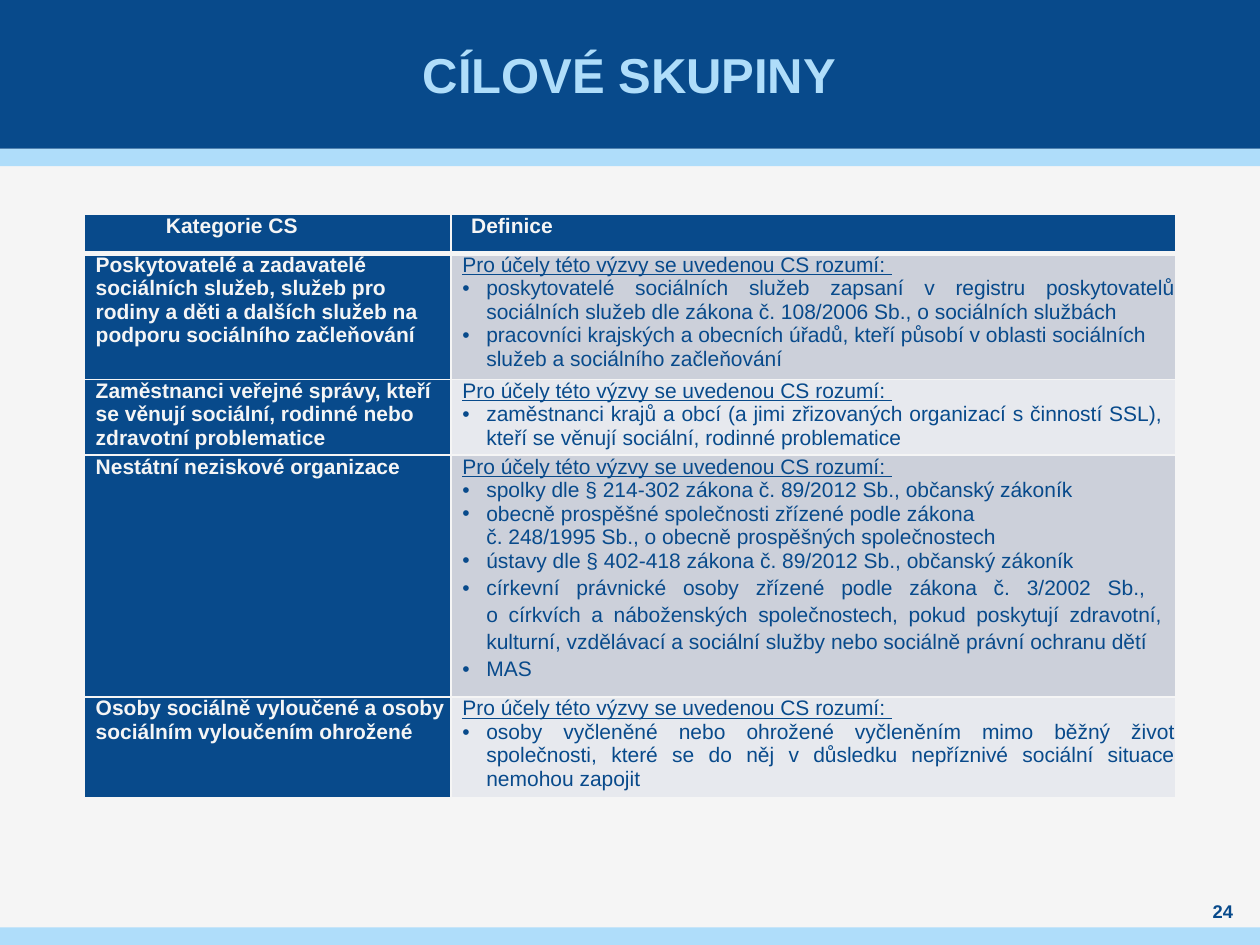
from copy import deepcopy

from lxml.etree import SubElement
from pptx import Presentation
from pptx.dml.color import RGBColor
from pptx.enum.shapes import MSO_SHAPE
from pptx.enum.text import MSO_ANCHOR, PP_ALIGN
from pptx.oxml.ns import qn
from pptx.util import Inches, Pt

WIDTH, HEIGHT = 10, 7.5
NAVY, SKY, PAPER = "084A8B", "AFDDFA", "F5F5F5"
BANDS = ("CCD0DA", "E7E9EE")
COLS = (2.91, 5.75)
ROWS = (0.31, 0.93, 0.57, 1.81, 0.74)
INDENT, HANG = 0.09, 0.19
LEAD = "Pro účely této výzvy se uvedenou CS rozumí: "
HEAD = {"size": Pt(12), "bold": True}
BODY = {"size": Pt(12), "bold": False}
LEFT, CENTER, JUSTIFY = PP_ALIGN.LEFT, PP_ALIGN.CENTER, PP_ALIGN.JUSTIFY

# category, right inset, bullets as (text, alignment, line spacing)
GROUPS = [
    ("Poskytovatelé a zadavatelé sociálních služeb, služeb pro rodiny a děti "
     "a dalších služeb na podporu sociálního začleňování", 0, [
         ("poskytovatelé sociálních služeb zapsaní v registru poskytovatelů\v"
          "sociálních služeb dle zákona č. 108/2006 Sb., o sociálních službách",
          JUSTIFY, 1),
         ("pracovníci krajských a obecních úřadů, kteří působí v oblasti sociálních "
          "služeb a sociálního začleňování", LEFT, 1)]),
    ("Zaměstnanci veřejné správy, kteří se věnují sociální, rodinné nebo "
     "zdravotní problematice", 0.1, [
         ("zaměstnanci krajů a obcí (a jimi zřizovaných organizací s činností SSL), "
          "kteří se věnují sociální, rodinné problematice", JUSTIFY, 1)]),
    ("Nestátní neziskové organizace", 0.1, [
        ("spolky dle § 214-302 zákona č. 89/2012 Sb., občanský zákoník", LEFT, 1),
        ("obecně prospěšné společnosti zřízené podle zákona \v"
         "č. 248/1995 Sb., o obecně prospěšných společnostech", LEFT, 1),
        ("ústavy dle § 402-418 zákona č. 89/2012 Sb., občanský zákoník", LEFT, 1),
        ("církevní právnické osoby zřízené podle zákona č. 3/2002 Sb., \v"
         "o církvích a náboženských společnostech, pokud poskytují zdravotní, "
         "kulturní, vzdělávací a sociální služby nebo sociálně právní ochranu dětí",
         JUSTIFY, 1.15),
        ("MAS", LEFT, 1.15)]),
    ("Osoby sociálně vyloučené a osoby sociálním vyloučením ohrožené", 0, [
        ("osoby vyčleněné nebo ohrožené vyčleněním mimo běžný život společnosti, "
         "které se do něj v důsledku nepříznivé sociální situace nemohou zapojit",
         JUSTIFY, 1)]),
]


def rgb(value):
    return RGBColor.from_string(value)


def write(p, text, color, fmt, align=LEFT, spacing=None):
    p.text = text
    p.alignment = align
    if spacing:
        p.line_spacing = spacing
    for r in p.runs:
        r.font.name = "Arial"
        r.font.color.rgb = rgb(color)
        for name, value in fmt.items():
            setattr(r.font, name, value)
    for br in p._p.findall(qn("a:br")):
        br.append(deepcopy(p.runs[0]._r.rPr))


def add_bullet(p):
    pPr = p._p.get_or_add_pPr()
    pPr.set("marL", str(Inches(HANG)))
    pPr.set("indent", str(-Inches(HANG)))
    SubElement(pPr, qn("a:buFont"), typeface="Arial")
    SubElement(pPr, qn("a:buChar"), char="•")


def add_center_tab(p, pos):
    tabs = SubElement(p._p.get_or_add_pPr(), qn("a:tabLst"))
    SubElement(tabs, qn("a:tab"), pos=str(Inches(pos)), algn="ctr")


def add_band(s, top, height, color):
    sp = s.shapes.add_shape(MSO_SHAPE.RECTANGLE, 0, Inches(top),
                            Inches(WIDTH), Inches(height))
    sp.shadow.inherit = False
    sp.fill.solid()
    sp.fill.fore_color.rgb = rgb(color)
    sp.line.fill.background()


def add_label(s, box, text, color, size):
    tf = s.shapes.add_textbox(*map(Inches, box)).text_frame
    tf.word_wrap = True
    tf.vertical_anchor = MSO_ANCHOR.MIDDLE
    tf.margin_left = tf.margin_right = tf.margin_top = tf.margin_bottom = 0
    write(tf.paragraphs[0], text, color, {"size": Pt(size), "bold": True}, CENTER)


def style_cell(cell, fill, left=INDENT, right=0, bottom=1):
    """Set insets, borders (bottom width in points) and fill."""
    cell.margin_left, cell.margin_right = Inches(left), Inches(right)
    cell.margin_top = cell.margin_bottom = 0
    tcPr = cell._tc.get_or_add_tcPr()
    for side, width in {"L": 1, "R": 1, "T": 1, "B": bottom}.items():
        ln = SubElement(tcPr, qn(f"a:ln{side}"), w=str(Pt(width)))
        SubElement(SubElement(ln, qn("a:solidFill")), qn("a:srgbClr"), val=PAPER)
    cell.fill.solid()
    cell.fill.fore_color.rgb = rgb(fill)


def fill_header(tbl):
    category, definition = tbl.cell(0, 0), tbl.cell(0, 1)
    style_cell(category, NAVY, left=0, bottom=3)
    p = category.text_frame.paragraphs[0]
    add_center_tab(p, 1.17)
    write(p, "\tKategorie CS", PAPER, HEAD)
    style_cell(definition, NAVY, left=0.16, bottom=3)
    write(definition.text_frame.paragraphs[0], "Definice", PAPER, HEAD)


def fill_group(tbl, row, category, right, bullets):
    name, definition = tbl.cell(row, 0), tbl.cell(row, 1)
    top = 3 if row == 1 else 1
    style_cell(name, NAVY)
    style_cell(definition, BANDS[(row - 1) % 2], right=right)
    for cell in (name, definition):
        cell._tc.tcPr.find(qn("a:lnT")).set("w", str(Pt(top)))
    write(name.text_frame.paragraphs[0], category, PAPER, HEAD)
    tf = definition.text_frame
    write(tf.paragraphs[0], LEAD, NAVY, {**BODY, "underline": True}, JUSTIFY)
    for text, align, spacing in bullets:
        p = tf.add_paragraph()
        add_bullet(p)
        write(p, text, NAVY, BODY, align, spacing)


def add_groups_table(s):
    frame = s.shapes.add_table(len(ROWS), len(COLS), Inches((WIDTH - sum(COLS)) / 2),
                               Inches(1.7), Inches(sum(COLS)), Inches(sum(ROWS)))
    tbl = frame.table
    tbl.horz_banding = False
    for col, width in zip(tbl.columns, COLS):
        col.width = Inches(width)
    for row, height in zip(tbl.rows, ROWS):
        row.height = Inches(height)
    fill_header(tbl)
    for row, group in enumerate(GROUPS, 1):
        fill_group(tbl, row, *group)


def main():
    prs = Presentation()
    prs.slide_width, prs.slide_height = Inches(WIDTH), Inches(HEIGHT)
    s = prs.slides.add_slide(prs.slide_layouts[6])
    s.background.fill.solid()
    s.background.fill.fore_color.rgb = rgb(PAPER)
    banner, stripe = 1.18, 0.14
    add_band(s, banner, stripe, SKY)
    add_band(s, 0, banner, NAVY)
    add_band(s, HEIGHT - stripe, stripe, SKY)
    add_label(s, (0.39, 0, 9.21, banner), "CÍLOVÉ SKUPINY", SKY, 28)
    add_groups_table(s)
    add_label(s, (9.45, 7.13, 0.51, 0.2), "24", NAVY, 10.5)
    prs.save("out.pptx")


if __name__ == "__main__":
    main()
